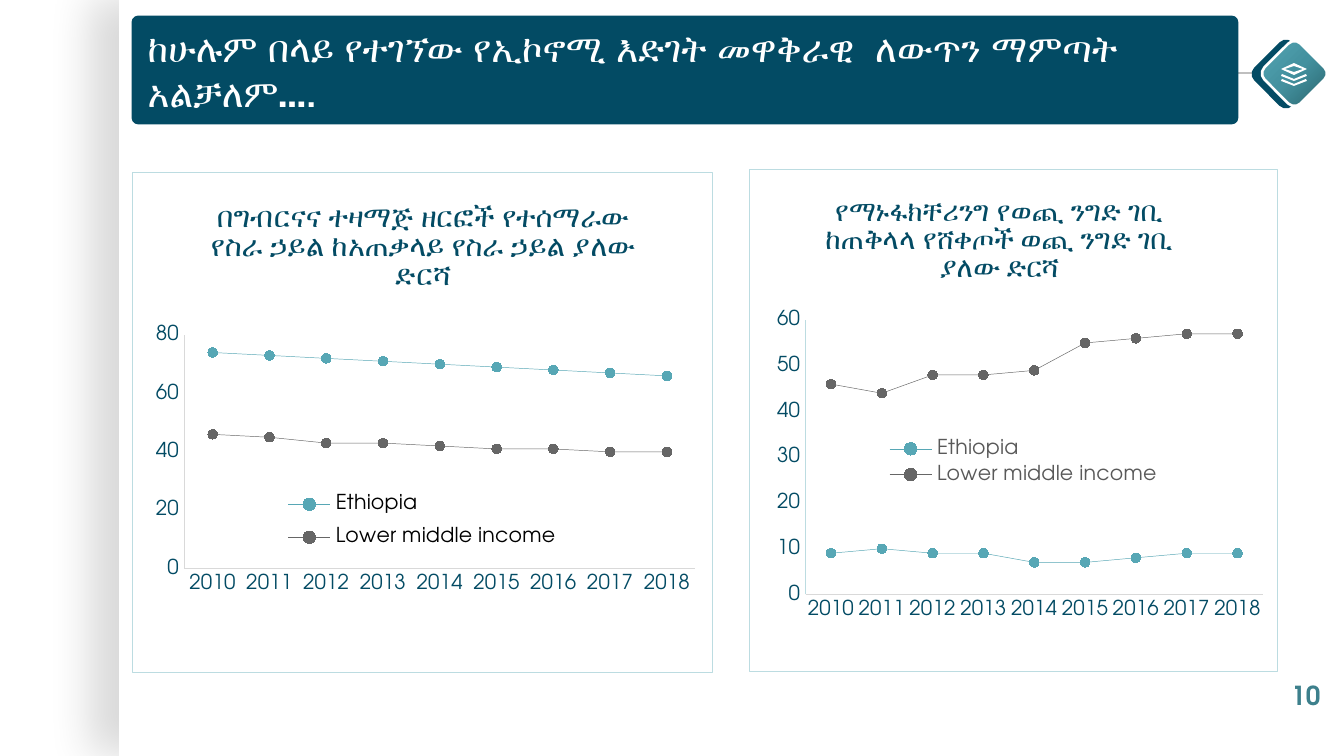
import lxml.etree
import pptx
import pptx.chart.data
import pptx.dml.color
import pptx.enum.chart
import pptx.enum.shapes
import pptx.enum.text
import pptx.oxml
import pptx.oxml.ns
import pptx.util

PX = 914400 / 134.4
HEADING_FONT = "TeX Gyre Adventor"
NAVY, TEAL, GREY, PALE, WHITE = "034B64", "57A7B5", "666666", "BCDCE1", "FFFFFF"
SILVER = "D9D9D9"
HEADLINE = "ከሁሉም በላይ የተገኘው የኢኮኖሚ እድገት መዋቅራዊ  ለውጥን ማምጣት አልቻለም…."
PAGE = "10"
YEARS = [str(year) for year in range(2010, 2019)]
SERIES_COLOURS = {"Ethiopia": TEAL, "Lower middle income": GREY}

# Boxes are left, top, width, height in px; plot is in fractions of the chart.
EXPORTS = dict(
    title="የማኑፋክቸሪንግ የወጪ ንግድ ገቢ ከጠቅላላ የሸቀጦች ወጪ ንግድ ገቢ ያለው ድርሻ",
    title_size=15, title_at=(820, 190), box=(749, 169, 529, 503),
    plot=(0.106, 0.3, 0.867, 0.547), legend=(886, 433, 275, 58),
    legend_colour="595959", legend_side="BOTTOM", axis_line=PALE, top=60, step=10,
    values=[[9, 10, 9, 9, 7, 7, 8, 9, 9], [46, 44, 48, 48, 49, 55, 56, 57, 57]])
LABOUR = dict(
    title="በግብርናና ተዛማጅ ዘርፎች የተሰማራው የስራ ኃይል ከአጠቃላይ የስራ ኃይል ያለው ድርሻ",
    title_size=15.5, title_at=(205, 194), box=(132, 172, 581, 501),
    plot=(0.089, 0.325, 0.882, 0.468), legend=(285, 481, 275, 80),
    legend_colour="000000", legend_side="TOP", axis_line=SILVER, top=80, step=20,
    values=[[74, 73, 72, 71, 70, 69, 68, 67, 66], [46, 45, 43, 43, 42, 41, 41, 40, 40]])

DIAMOND = [[(1294, 63), (1307, 69), (1294, 75), (1281, 69)],
           [(1294, 66), (1285, 69), (1294, 72), (1303, 69)]]
CHEVRON = [(1282, 74), (1294, 79), (1306, 74), (1307, 76), (1294, 81), (1281, 76)]
ICON_STOPS = [(0, "2F666F"), (26, "377B86"), (50, "43919F"), (100, TEAL)]


def px(*lengths):
    return [round(length * PX) for length in lengths]


def rgb(colour):
    return pptx.dml.color.RGBColor.from_string(colour)


def xml(text):
    head, tail = text.split(" ", 1) if " " in text.split(">")[0] else text.split(">", 1)
    gap = " " if " " in text.split(">")[0] else ">"
    return pptx.oxml.parse_xml(f"{head} {pptx.oxml.ns.nsdecls('a', 'c')}{gap}{tail}")


def set_line(line, colour, width):
    line.color.rgb = rgb(colour)
    line.width = pptx.util.Pt(width)


def set_font(font, size, colour, name=HEADING_FONT, bold=False):
    font.size, font.name, font.bold = pptx.util.Pt(size), name, bold
    font.color.rgb = rgb(colour)


def paint(shape, colour):
    shape.shadow.inherit = False
    shape.fill.solid()
    shape.fill.fore_color.rgb = rgb(colour)
    shape.line.fill.background()
    return shape


def add_box(kind, box, colour):
    preset = getattr(pptx.enum.shapes.MSO_SHAPE, kind)
    return paint(slide.shapes.add_shape(preset, *px(*box)), colour)


def add_outline(contours):
    (start, *rest), *holes = contours
    builder = slide.shapes.build_freeform(*start, scale=PX)
    builder.add_line_segments(rest)
    for first, *others in holes:
        builder.move_to(*first)
        builder.add_line_segments(others)
    return paint(builder.convert_to_shape(), WHITE)


def place(part, index, fractions, inner=False):
    """Give a chart part a manual layout, inserted as its child number index."""
    for old in part.findall(pptx.oxml.ns.qn("c:layout")):
        part.remove(old)
    target = '<c:layoutTarget val="inner"/>' if inner else ""
    modes = "".join(f'<c:{axis}Mode val="edge"/>' for axis in "xy")
    sizes = "".join(f'<c:{key} val="{value:.3f}"/>' for key, value in zip("xywh", fractions))
    part.insert(index, xml(
        f"<c:layout><c:manualLayout>{target}{modes}{sizes}</c:manualLayout></c:layout>"))


def add_line_chart(content):
    left, top, width, height = content["box"]

    def inside(x, y, *size):
        return [(x - left) / width, (y - top) / height,
                *(length / whole for length, whole in zip(size, (width, height)))]

    data = pptx.chart.data.CategoryChartData(number_format="0")
    data.categories = YEARS
    for name, values in zip(SERIES_COLOURS, content["values"]):
        data.add_series(name, values)
    chart = slide.shapes.add_chart(
        pptx.enum.chart.XL_CHART_TYPE.LINE_MARKERS, *px(*content["box"]), data).chart
    set_font(chart.font, 11, "000000", "Karla")

    title = chart.chart_title.text_frame.paragraphs[0].add_run()
    title.text = content["title"]
    set_font(title.font, content["title_size"], NAVY, "Lato")
    place(chart.chart_title._element, 1, inside(*content["title_at"]))

    chart.has_legend = True
    chart.legend.position = getattr(
        pptx.enum.chart.XL_LEGEND_POSITION, content["legend_side"])
    chart.legend.include_in_layout = False
    set_font(chart.legend.font, 11, content["legend_colour"])
    place(chart.legend._element, 1, inside(*content["legend"]))

    values_axis = chart.value_axis
    for axis, colour in ((chart.category_axis, SILVER), (values_axis, content["axis_line"])):
        axis.has_major_gridlines = False
        axis.major_tick_mark = axis.minor_tick_mark = pptx.enum.chart.XL_TICK_MARK.NONE
        set_font(axis.tick_labels.font, 11, NAVY)
        set_line(axis.format.line, colour, 0.75)
    values_axis.minimum_scale, values_axis.maximum_scale = 0, content["top"]
    values_axis.major_unit = content["step"]
    values_axis.tick_labels.number_format = "0"
    values_axis.tick_labels.number_format_is_linked = False

    plot = chart.plots[0]
    plot.vary_by_categories = False
    for series, colour in zip(plot.series, SERIES_COLOURS.values()):
        series.smooth = False
        set_line(series.format.line, colour, 0.25)
        series.marker.style = pptx.enum.chart.XL_MARKER_STYLE.CIRCLE
        series.marker.size = 5
        series.marker.format.fill.solid()
        series.marker.format.fill.fore_color.rgb = rgb(colour)
        set_line(series.marker.format.line, WHITE, 0.75)

    chart_xml = chart._chartSpace.chart
    place(chart_xml.plotArea, 0, content["plot"], inner=True)
    chart_xml.addnext(xml(
        '<c:spPr><a:noFill/><a:ln w="9525"><a:solidFill>'
        f'<a:srgbClr val="{PALE}"/></a:solidFill></a:ln></c:spPr>'))


deck = pptx.Presentation()
deck.slide_width, deck.slide_height = px(1344, 756)
slide = deck.slides.add_slide(deck.slide_layouts[6])

panel = add_box("RECTANGLE", (119, 0, 1225, 756), WHITE)
panel_effects = panel._element.spPr.find(pptx.oxml.ns.qn("a:effectLst"))
panel_effects.append(xml(
    '<a:outerShdw blurRad="285750" dist="190500" dir="10800000" rotWithShape="0">'
    '<a:srgbClr val="000000"><a:alpha val="15000"/></a:srgbClr></a:outerShdw>'))

add_line_chart(EXPORTS)

link = slide.shapes.add_connector(
    pptx.enum.shapes.MSO_CONNECTOR.STRAIGHT, *px(1184, 73, 1292, 73))
set_line(link.line, "BFBFBF", 0.75)
lxml.etree.SubElement(link._element.spPr, pptx.oxml.ns.qn("a:effectLst"))

banner = add_box("ROUNDED_RECTANGLE", (133, 17, 1104, 106), NAVY)
banner.adjustments[0] = 0.05
set_line(banner.line, NAVY, 1.5)
banner.text_frame.vertical_anchor = pptx.enum.text.MSO_ANCHOR.MIDDLE
banner_line = banner.text_frame.paragraphs[0]
banner_line.alignment = pptx.enum.text.PP_ALIGN.LEFT
headline = banner_line.add_run()
headline.text = HEADLINE
set_font(headline.font, 20, WHITE, bold=True)

page_frame = slide.shapes.add_textbox(*px(1278, 673, 56, 46)).text_frame
page_frame.word_wrap = False
page = page_frame.paragraphs[0].add_run()
page.text = PAGE
set_font(page.font, 14, "3D808C", bold=True)

add_line_chart(LABOUR)

badge_back = add_box("ROUNDED_RECTANGLE", (1259, 47, 54, 54), NAVY)
badge = add_box("ROUNDED_RECTANGLE", (1269, 48, 51, 51), TEAL)
badge_back.rotation = badge.rotation = 315
set_line(badge.line, WHITE, 1.42)
stops = "".join(f'<a:gs pos="{at * 1000}"><a:srgbClr val="{colour}"/></a:gs>'
                for at, colour in ICON_STOPS)
badge_fill = badge._element.spPr.find(pptx.oxml.ns.qn("a:solidFill"))
badge_fill.addnext(xml(
    f'<a:gradFill rotWithShape="1"><a:gsLst>{stops}</a:gsLst><a:path path="circle">'
    '<a:fillToRect l="100000" t="100000"/></a:path></a:gradFill>'))
badge._element.spPr.remove(badge_fill)

add_outline(DIAMOND)
for drop in (5, 0):
    add_outline([[(x, y + drop) for x, y in CHEVRON]])

deck.save("out.pptx")
